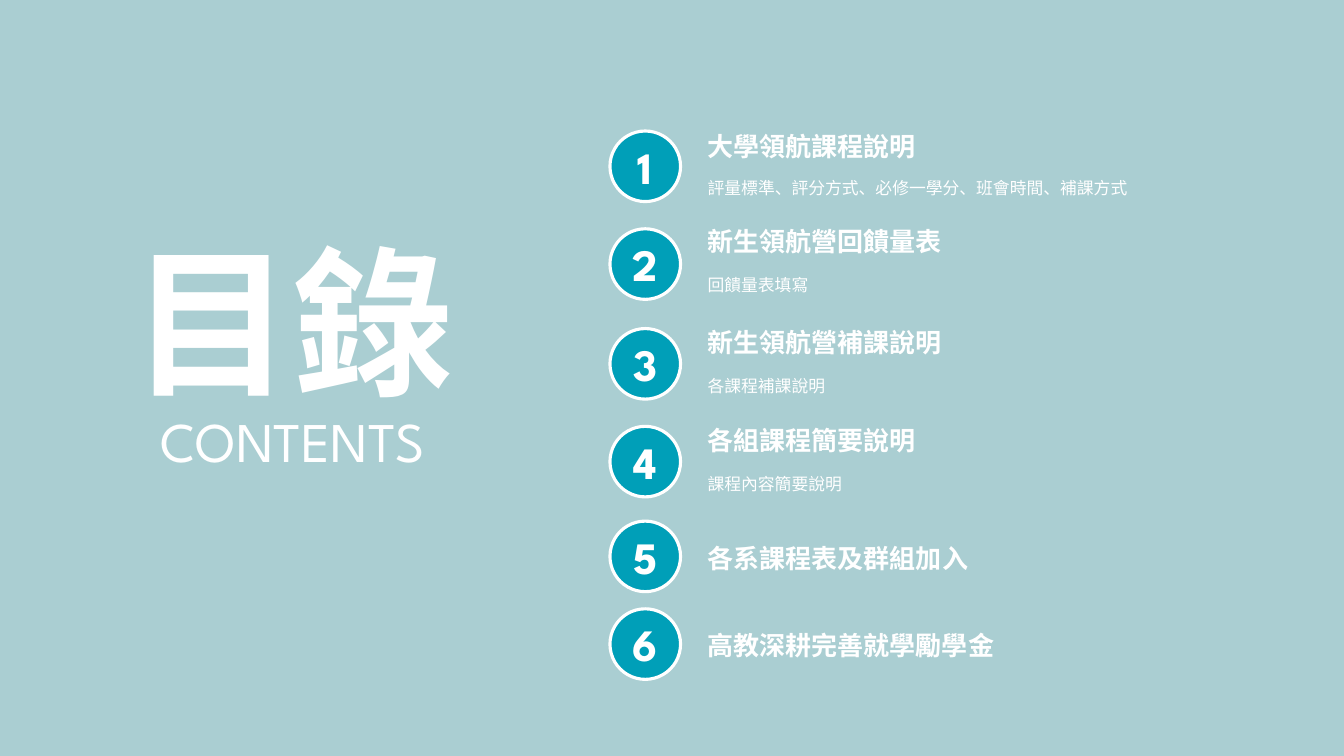
from lxml.etree import SubElement
from pptx import Presentation
from pptx.dml.color import RGBColor
from pptx.enum.shapes import MSO_SHAPE
from pptx.enum.text import MSO_ANCHOR, MSO_AUTO_SIZE, PP_ALIGN
from pptx.oxml.ns import qn
from pptx.util import Emu, Pt

EMU_PER_PX = 9144  # 100 px to the inch

COLORS = {"background": "AACED2", "badge": "009FB8", "white": "FFFFFF"}
LATIN_FONT = "League Spartan"
CJK_FONT = "Noto Sans CJK SC"

FORMATS = {
    "heading": {"name": CJK_FONT, "size": Pt(115), "bold": True},
    "subheading": {"name": LATIN_FONT, "size": Pt(40), "bold": False},
    "number": {"name": LATIN_FONT, "size": Pt(32), "bold": True},
    "topic": {"name": LATIN_FONT, "size": Pt(18.6), "bold": True},
    "detail": {"name": LATIN_FONT, "size": Pt(12), "bold": False},
}

BADGE_LEFT, BADGE_SIZE = 605, 70
TEXT_LEFT = 692
TOPIC_HEIGHT, DETAIL_HEIGHT = 41, 34
TOPIC_CHARACTER, TOPIC_MARGINS = 26, 21

# badge top, topic top, topic, detail top, detail width, detail
CONTENTS = [
    (130, 125, "大學領航課程說明", 165, 449,
     "評量標準、評分方式、必修一學分、班會時間、補課方式"),
    (227, 219, "新生領航營回饋量表", 262, 423, "回饋量表填寫"),
    (326, 319, "新生領航營補課說明", 362, 423, "各課程補課說明"),
    (423, 416, "各組課程簡要說明", 459, 423, "課程內容簡要說明"),
    (517, 533, "各系課程表及群組加入", None, None, None),
    (604, 620, "高教深耕完善就學勵學金", None, None, None),
]


def px(*lengths):
    return [Emu(length * EMU_PER_PX) for length in lengths]


def color(name):
    return RGBColor.from_string(COLORS[name])


def write_text(shape, text, style, alignment):
    paragraph = shape.text_frame.paragraphs[0]
    paragraph.alignment = alignment
    run = paragraph.add_run()
    run.text = text
    for attribute, value in FORMATS[style].items():
        setattr(run.font, attribute, value)
    run.font.color.rgb = color("white")
    east_asian = SubElement(run.font._element, qn("a:ea"))
    east_asian.set("typeface", CJK_FONT)
    return paragraph


def add_text(slide, box, text, style, alignment=PP_ALIGN.LEFT, wrap=False):
    shape = slide.shapes.add_textbox(*px(*box))
    shape.text_frame.word_wrap = wrap
    shape.text_frame.auto_size = MSO_AUTO_SIZE.SHAPE_TO_FIT_TEXT
    return write_text(shape, text, style, alignment)


def add_badge(slide, top, number):
    badge = slide.shapes.add_shape(
        MSO_SHAPE.OVAL, *px(BADGE_LEFT, top, BADGE_SIZE, BADGE_SIZE))
    badge.shadow.inherit = False
    badge.fill.solid()
    badge.fill.fore_color.rgb = color("badge")
    badge.line.color.rgb = color("white")
    badge.line.width = Pt(2.25)
    badge.text_frame.vertical_anchor = MSO_ANCHOR.MIDDLE
    write_text(badge, str(number), "number", PP_ALIGN.CENTER)


def add_topic(slide, top, topic):
    width = len(topic) * TOPIC_CHARACTER + TOPIC_MARGINS
    add_text(slide, (TEXT_LEFT, top, width, TOPIC_HEIGHT), topic, "topic")


def add_detail(slide, top, width, detail):
    paragraph = add_text(slide, (TEXT_LEFT, top, width, DETAIL_HEIGHT),
                         detail, "detail", wrap=True)
    paragraph.line_spacing = 1.3


def main():
    presentation = Presentation()
    presentation.slide_width, presentation.slide_height = px(1333, 750)
    slide = presentation.slides.add_slide(presentation.slide_layouts[6])
    slide.background.fill.solid()
    slide.background.fill.fore_color.rgb = color("background")

    add_text(slide, (119, 216, 343, 204), "目錄", "heading", PP_ALIGN.CENTER)
    add_text(slide, (139, 398, 303, 77), "CONTENTS", "subheading",
             PP_ALIGN.CENTER)
    for number, entry in enumerate(CONTENTS, start=1):
        badge_top, topic_top, topic, detail_top, detail_width, detail = entry
        add_topic(slide, topic_top, topic)
        if detail:
            add_detail(slide, detail_top, detail_width, detail)
        add_badge(slide, badge_top, number)

    presentation.save("out.pptx")


if __name__ == "__main__":
    main()
